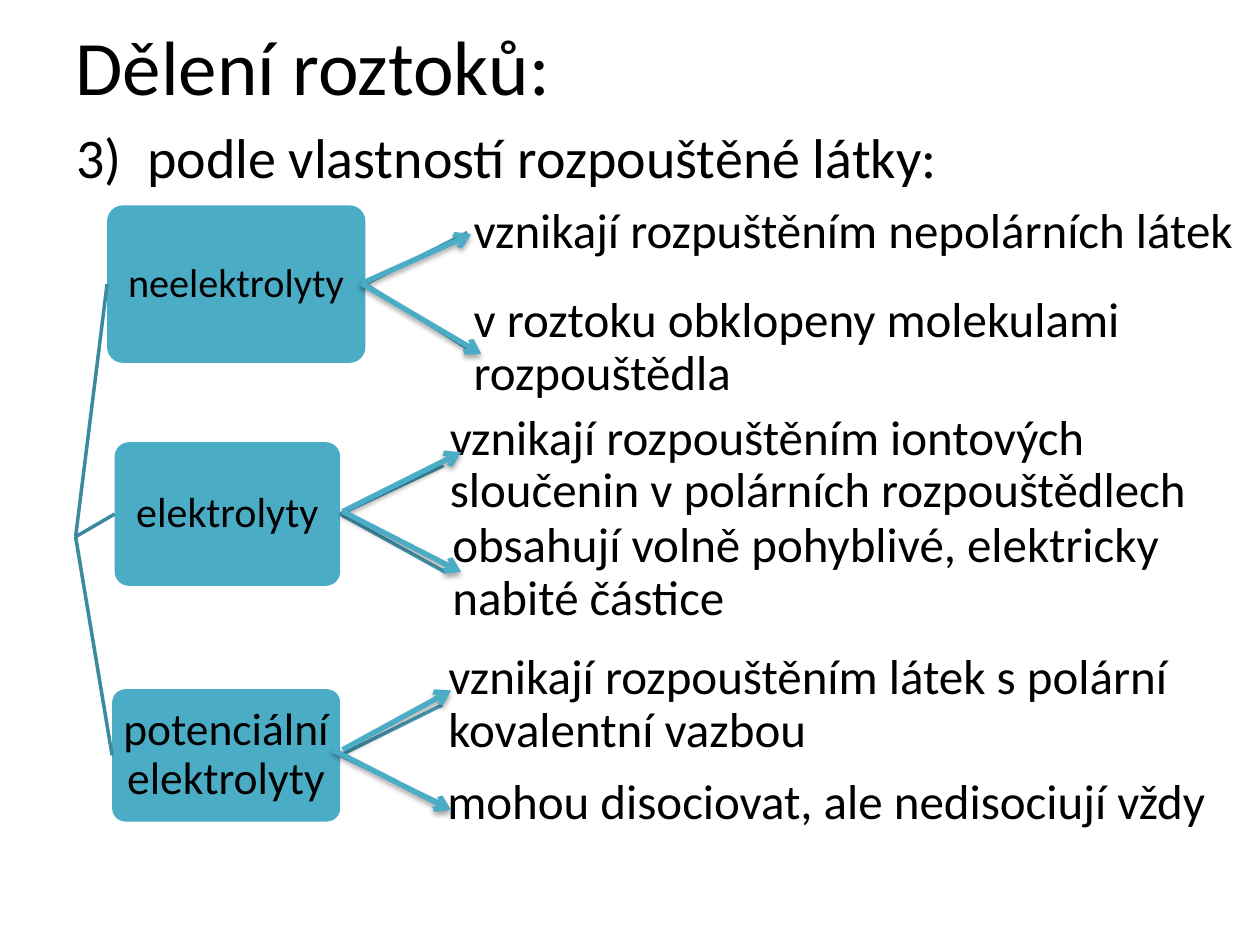
from lxml.etree import SubElement
from pptx import Presentation
from pptx.dml.color import RGBColor
from pptx.enum.shapes import MSO_CONNECTOR, MSO_SHAPE
from pptx.enum.text import MSO_ANCHOR, PP_ALIGN
from pptx.oxml.ns import qn
from pptx.util import Inches, Pt

COLORS = {"text": "000000", "box": "4BACC6", "trunk": "3C8A9F", "branch": "449CB4"}
FONT = "Calibri"
COLUMNS, ROWS = 100, 75
LEFT, RIGHT = 1, 3


class Diagram:
    """Draws on one slide; lengths are grid columns and rows."""

    def __init__(self, deck):
        self.slide = deck.slides.add_slide(deck.slide_layouts[5])
        self.column = deck.slide_width / COLUMNS
        self.row = deck.slide_height / ROWS

    def place(self, x, y):
        return round(x * self.column), round(y * self.row)

    def fill_in(self, shape, words, size, align=PP_ALIGN.LEFT, inset=(0.05, 0.05), spacing=0.9):
        frame = shape.text_frame
        frame.word_wrap = True
        frame.vertical_anchor = MSO_ANCHOR.MIDDLE
        frame.margin_left = frame.margin_right = Inches(inset[0])
        frame.margin_top = frame.margin_bottom = Inches(inset[1])
        frame.text = words
        paragraph = frame.paragraphs[0]
        paragraph.alignment = align
        paragraph.line_spacing = spacing
        paragraph.font.name = FONT
        paragraph.font.size = Pt(size)
        paragraph.font.color.rgb = RGBColor.from_string(COLORS["text"])
        return shape

    def title(self, words, x, y, width, height):
        heading = self.slide.shapes.title
        heading.left, heading.top = self.place(x, y)
        heading.width, heading.height = self.place(width, height)
        self.fill_in(heading, words, 44, inset=(0.1, 0.05), spacing=1.0)

    def numbered_line(self, words, x, y, width, height):
        item = self.text(words, x, y, width, height, size=32, inset=(0.1, 0.05), spacing=1.0)
        item.text_frame.vertical_anchor = MSO_ANCHOR.TOP
        paragraph = item.text_frame.paragraphs[0]
        paragraph.space_before = Pt(6.4)
        properties = paragraph._p.get_or_add_pPr()
        properties.set("marL", str(Inches(0.56)))
        properties.set("indent", str(-Inches(0.56)))

    def text(self, words, x, y, width, height, size=28, **style):
        holder = self.slide.shapes.add_textbox(*self.place(x, y), *self.place(width, height))
        return self.fill_in(holder, words, size, **style)

    def box(self, words, x, y, width, height, size):
        box = self.slide.shapes.add_shape(
            MSO_SHAPE.ROUNDED_RECTANGLE, *self.place(x, y), *self.place(width, height))
        box.adjustments[0] = 0.1
        box.shadow.inherit = False
        box.fill.solid()
        box.fill.fore_color.rgb = RGBColor.from_string(COLORS["box"])
        box.line.fill.background()
        return self.fill_in(box, words, size, PP_ALIGN.CENTER)

    def line(self, start, end, color, width=2):
        line = self.slide.shapes.add_connector(
            MSO_CONNECTOR.STRAIGHT, *self.place(*start), *self.place(*end))
        line.line.color.rgb = RGBColor.from_string(COLORS[color])
        line.line.width = Pt(width)
        effects = SubElement(line.element.spPr, qn("a:effectLst"))
        return line, effects

    def arrow(self, start, end):
        arrow, effects = self.line(start, end, "box", 3)
        SubElement(arrow.element.spPr.find(qn("a:ln")), qn("a:tailEnd"), type="arrow")
        shadow = SubElement(effects, qn("a:outerShdw"), blurRad=str(Pt(3.1)),
                            dist=str(Pt(1.8)), dir="5400000", rotWithShape="0")
        black = SubElement(shadow, qn("a:srgbClr"), val="000000")
        SubElement(black, qn("a:alpha"), val="35000")


# Each kind of solution: label, label size, box, then properties with their
# text area and the arrow that points to them
KINDS = [
    ("neelektrolyty", 23, (8.5, 16.3, 20.5, 12.5), [
        ("vznikají rozpuštěním nepolárních látek", (37.1, 13, 62.8, 10.9),
         (28.7, 22.5), (37.4, 18.6)),
        ("v roztoku obklopeny molekulami rozpouštědla", (37.1, 24.4, 62.8, 6.5),
         (28.7, 22.5), (38.2, 28.1)),
    ]),
    ("elektrolyty", 24, (9.1, 35.1, 17.9, 11.4), [
        ("vznikají rozpouštěním iontových sloučenin v polárních rozpouštědlech",
         (35.2, 31.7, 62.4, 10.5), (27.2, 40.6), (36.6, 35.9)),
        ("obsahují volně pohyblivé, elektricky nabité částice", (35.4, 42.2, 61.2, 6.5),
         (27.2, 40.6), (36.6, 45.4)),
    ]),
    ("potenciální elektrolyty", 26, (8.9, 54.7, 18.1, 10.5), [
        ("vznikají rozpouštěním látek s polární kovalentní vazbou", (35.1, 52.7, 63, 6.5),
         (27.2, 59.5), (35.8, 54.8)),
        ("mohou disociovat, ale nedisociují vždy", (35, 60.5, 64.9, 6.5),
         (26.4, 59.5), (35.8, 64.3)),
    ]),
]
ROOT = (6, 42.6)


def main():
    deck = Presentation()
    deck.slide_width, deck.slide_height = Inches(10), Inches(7.5)
    diagram = Diagram(deck)

    # Heading and numbered criterion
    diagram.title("Dělení roztoků:", 5, -1.1, 90, 12.5)
    diagram.numbered_line("3)\tpodle vlastností rozpouštěné látky:", 5.1, 9.2, 90, 49.5)

    # Tree: root to kinds, kinds to properties
    for label, size, area, properties in KINDS:
        kind = diagram.box(label, *area, size)
        trunk, _ = diagram.line(ROOT, area[:2], "trunk")
        trunk.end_connect(kind, LEFT)
        for words, text_area, _, _ in properties:
            detail = diagram.text(words, *text_area)
            branch, _ = diagram.line(area[:2], text_area[:2], "branch")
            branch.begin_connect(kind, RIGHT)
            branch.end_connect(detail, LEFT)

    # Arrows on top of the tree
    for _, _, _, properties in KINDS:
        for _, _, start, end in properties:
            diagram.arrow(start, end)

    deck.save("out.pptx")


if __name__ == "__main__":
    main()
